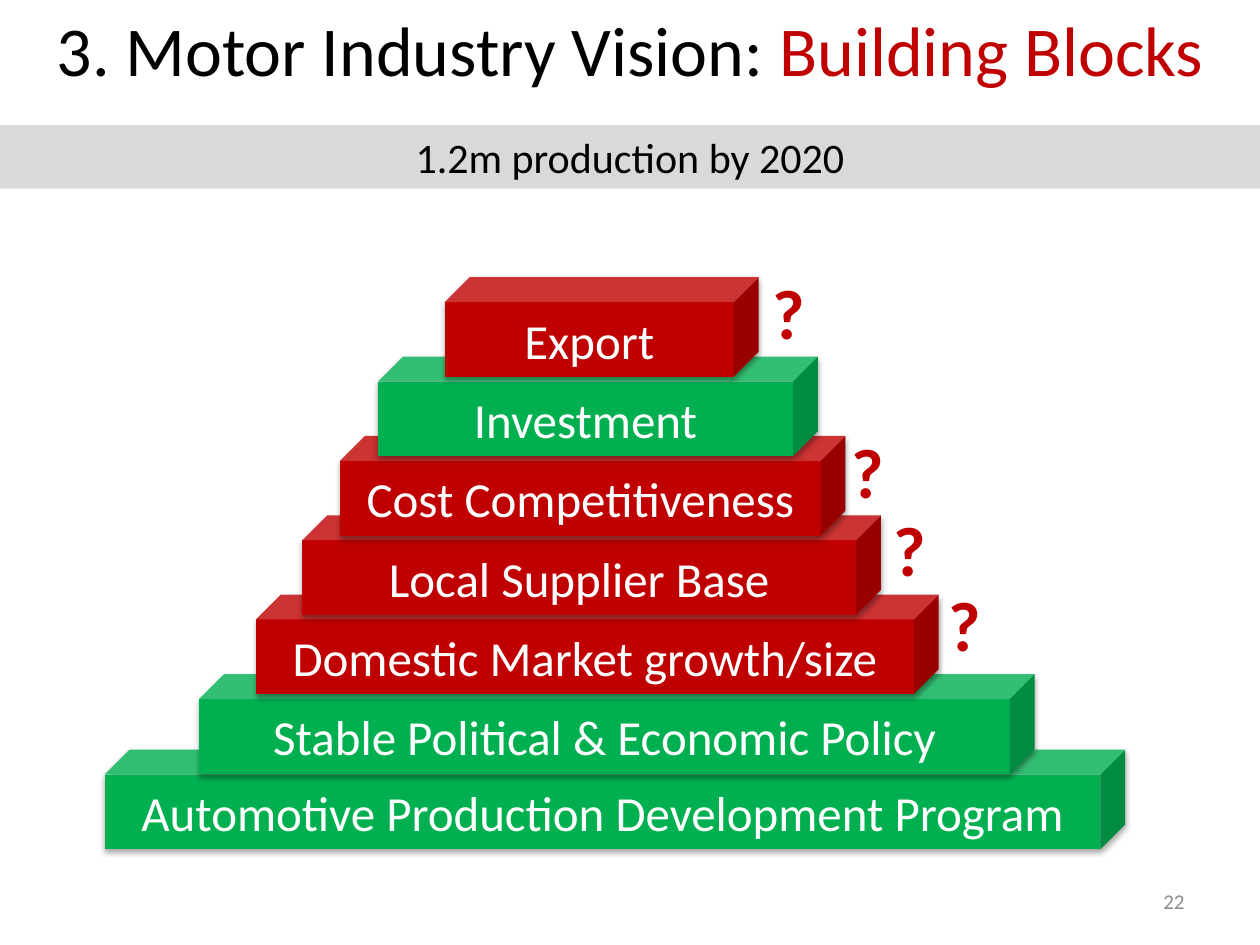
import pptx
import pptx.util
import pptx.dml.color
import pptx.enum.shapes
import pptx.enum.text
import lxml.etree

Pt = pptx.util.Pt
ALIGN = pptx.enum.text.PP_ALIGN
ANCHOR = pptx.enum.text.MSO_ANCHOR
AUTOSIZE = pptx.enum.text.MSO_AUTO_SIZE
SHAPE = pptx.enum.shapes.MSO_SHAPE
COLOURS = {"black": "000000", "white": "FFFFFF", "red": "C00000",
           "green": "00B050", "band": "D9D9D9", "number": "8C8C8C"}


def rgb(name):
    return pptx.dml.color.RGBColor.from_string(COLOURS[name])


def write(frame, pieces, size, align, anchor, bold=False):
    frame.vertical_anchor = anchor
    paragraph = frame.paragraphs[0]
    paragraph.alignment = align
    for words, colour in pieces:
        run = paragraph.add_run()
        run.text = words
        run.font.name = "Calibri"
        run.font.size = Pt(size)
        run.font.bold = bold
        run.font.color.rgb = rgb(colour)


deck = pptx.Presentation()
deck.slide_width, deck.slide_height = Pt(720), Pt(540)
slide = deck.slides.add_slide(deck.slide_layouts[5])

heading = slide.shapes.title
heading.left, heading.top, heading.width, heading.height = Pt(0), Pt(0), Pt(720), Pt(67.5)
heading.text_frame.auto_size = AUTOSIZE.NONE
write(heading.text_frame,
      [("3. Motor Industry Vision: ", "black"), ("Building Blocks", "red")],
      40, ALIGN.CENTER, ANCHOR.TOP)

blocks = [
    ("Automotive Production Development Program", 59.8, 428.4, 583.2, "green"),
    ("Stable Political & Economic Policy", 113.8, 385.2, 477.4, "green"),
    ("Domestic Market growth/size", 146.2, 339.8, 390.2, "red"),
    ("Local Supplier Base", 172.8, 294.5, 330.5, "red"),
    ("Cost Competitiveness", 194.4, 249.1, 288.7, "red"),
    ("Investment", 216, 203.8, 251.3, "green"),
    ("Export", 254.2, 158.4, 179.3, "red"),
]
pyramid = slide.shapes.add_group_shape()
for label, left, top, width, colour in blocks:
    block = pyramid.shapes.add_shape(SHAPE.CUBE, Pt(left), Pt(top), Pt(width), Pt(56.9))
    block.adjustments[0] = 0.25
    block.fill.solid()
    block.fill.fore_color.rgb = rgb(colour)
    block.line.fill.background()
    block.shadow.inherit = False
    effects = block._element.spPr.find(pptx.oxml.ns.qn("a:effectLst"))
    shade = lxml.etree.SubElement(
        effects, pptx.oxml.ns.qn("a:outerShdw"), blurRad=str(Pt(3.1)),
        dist=str(Pt(1.8)), dir="5400000", rotWithShape="0")
    tint = lxml.etree.SubElement(shade, pptx.oxml.ns.qn("a:srgbClr"), val=COLOURS["black"])
    lxml.etree.SubElement(tint, pptx.oxml.ns.qn("a:alpha"), val="35000")
    block.text_frame.auto_size = AUTOSIZE.SHAPE_TO_FIT_TEXT
    write(block.text_frame, [(label, "white")], 28, ALIGN.CENTER, ANCHOR.MIDDLE)

for left, top in [(434.2, 150.5), (479.5, 241.2), (503.3, 285.8), (535, 329)]:
    doubt = slide.shapes.add_textbox(Pt(left), Pt(top), Pt(33.1), Pt(55.4))
    doubt.text_frame.word_wrap = False
    doubt.text_frame.auto_size = AUTOSIZE.SHAPE_TO_FIT_TEXT
    write(doubt.text_frame, [("?", "red")], 40, ALIGN.LEFT, ANCHOR.TOP, bold=True)

target = slide.shapes.add_shape(SHAPE.RECTANGLE, Pt(0), Pt(71.4), Pt(720), Pt(36.4))
target.fill.solid()
target.fill.fore_color.rgb = rgb("band")
target.line.fill.background()
target.shadow.inherit = False
target.text_frame.auto_size = AUTOSIZE.SHAPE_TO_FIT_TEXT
write(target.text_frame, [("1.2m production by 2020", "black")],
      24, ALIGN.CENTER, ANCHOR.MIDDLE)

page = slide.shapes.add_textbox(Pt(516), Pt(500.5), Pt(168), Pt(28.8))
page.text_frame.word_wrap = True
write(page.text_frame, [("22", "number")], 12, ALIGN.RIGHT, ANCHOR.MIDDLE)

deck.save("out.pptx")
